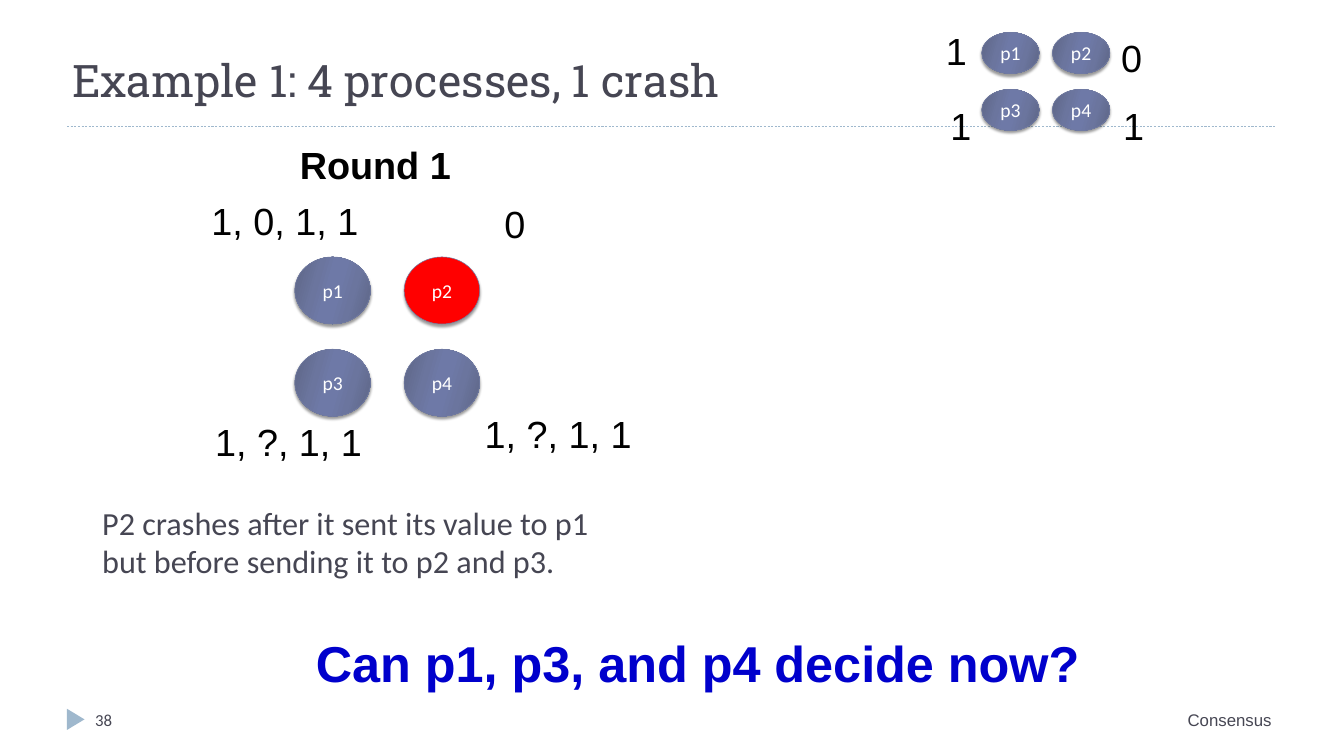
import dataclasses

import lxml.etree
import pptx
import pptx.dml.color
import pptx.enum.dml
import pptx.enum.shapes
import pptx.enum.text
import pptx.oxml.ns
import pptx.util
from pptx.util import Cm


@dataclasses.dataclass(frozen=True)
class Theme:
    """Colours, fonts and type sizes of the slide."""

    ink: str = "464653"
    black: str = "000000"
    white: str = "FFFFFF"
    accent: str = "9FB8CD"
    outline: str = "727CA3"
    crashed: str = "FF0000"
    question: str = "0000CC"
    gradient: tuple = ((0, "5D6585"), (30, "6B759E"), (45, "6E79A7"),
                       (55, "6E79A7"), (73, "6B759E"), (100, "5D6585"))
    heading_font: str = "Roboto Slab"
    body_font: str = "Calibri"
    label_font: str = "Arial"
    title_size: int = 64
    question_size: int = 72
    label_size: int = 54
    body_size: int = 46
    process_size: int = 28
    footer_size: int = 24


THEME = Theme()
ALIGN = pptx.enum.text.PP_ALIGN
ANCHOR = pptx.enum.text.MSO_ANCHOR
SHAPE = pptx.enum.shapes.MSO_SHAPE
VALUE_HEIGHT = 2.57


def rgb(code):
    """Return a colour object for a hex code."""
    return pptx.dml.color.RGBColor.from_string(code)


def add_child(parent, tag, **attributes):
    """Append a DrawingML element to a parent element."""
    child = lxml.etree.SubElement(parent, pptx.oxml.ns.qn(f"a:{tag}"))
    for name, value in attributes.items():
        child.set(name, str(value))
    return child


def add_span(para, text, font, size, color, bold=False):
    """Add one formatted run to a paragraph."""
    span = para.add_run()
    span.text = text
    span.font.name = font
    span.font.size = pptx.util.Pt(size)
    span.font.color.rgb = rgb(color)
    span.font.bold = bold


def add_text(shapes, area, text, font, size, color, bold=False,
             wrap=True, align=ALIGN.LEFT, anchor=ANCHOR.TOP):
    """Add a text box with one paragraph and return the paragraph."""
    box = shapes.add_textbox(*map(Cm, area))
    box.text_frame.word_wrap = wrap
    box.text_frame.vertical_anchor = anchor
    para = box.text_frame.paragraphs[0]
    para.alignment = align
    add_span(para, text, font, size, color, bold)
    return para


def add_label(shapes, area, text, size=THEME.label_size, color=THEME.black, bold=False):
    """Add an unwrapped label."""
    add_text(shapes, area, text, THEME.label_font, size, color, bold, wrap=False)


def fill_gradient(shape):
    """Fill a shape with the theme gradient."""
    shape.fill.gradient()
    shape.fill.gradient_angle = 344
    stops = next(shape._element.spPr.iter(pptx.oxml.ns.qn("a:gsLst")))
    for stop in list(stops):
        stops.remove(stop)
    for position, color in THEME.gradient:
        stop = add_child(stops, "gs", pos=position * 1000)
        add_child(stop, "srgbClr", val=color)


def add_shadow(shape):
    """Give a shape a soft shadow below it."""
    shape.shadow.inherit = False
    effects = shape._element.spPr.find(pptx.oxml.ns.qn("a:effectLst"))
    shadow = add_child(effects, "outerShdw", blurRad=pptx.util.Pt(4),
                       dist=pptx.util.Pt(3.4), dir=5400000, rotWithShape=0)
    color = add_child(shadow, "srgbClr", val=THEME.black)
    add_child(color, "alpha", val=40000)


def add_process(shapes, area, name, crashed=False):
    """Add one process ellipse."""
    process = shapes.add_shape(SHAPE.OVAL, *map(Cm, area))
    if crashed:
        process.fill.solid()
        process.fill.fore_color.rgb = rgb(THEME.crashed)
    else:
        fill_gradient(process)
    process.line.color.rgb = rgb(THEME.outline)
    process.line.width = pptx.util.Pt(0.75)
    add_shadow(process)
    process.text_frame.vertical_anchor = ANCHOR.MIDDLE
    para = process.text_frame.paragraphs[0]
    para.alignment = ALIGN.CENTER
    add_span(para, name, THEME.body_font, THEME.process_size, THEME.white)


def add_processes(shapes, origin, size, step, values, crashed=None):
    """Add a two by two grid of processes and their values."""
    for index, (left, top, width, text) in enumerate(values):
        row, column = divmod(index, 2)
        name = f"p{index + 1}"
        area = (origin[0] + column * step[0], origin[1] + row * step[1], *size)
        add_process(shapes, area, name, name == crashed)
        add_label(shapes, (left, top, width, VALUE_HEIGHT), text)


def add_rule(shapes):
    """Add the dashed line under the title."""
    rule = shapes.add_connector(pptx.enum.shapes.MSO_CONNECTOR.STRAIGHT,
                                Cm(3.38), Cm(6.35), Cm(64.34), Cm(6.35))
    rule.line.color.rgb = rgb(THEME.accent)
    rule.line.width = pptx.util.Pt(0.75)
    rule.line.dash_style = pptx.enum.dml.MSO_LINE.DASH
    add_child(rule._element.spPr, "effectLst")


def add_footer(shapes):
    """Add the page marker, page number and footer text."""
    marker = shapes.add_shape(SHAPE.ISOSCELES_TRIANGLE,
                              Cm(3.28), Cm(35.81), Cm(1.07), Cm(0.89))
    marker.rotation = 90
    marker.shadow.inherit = False
    marker.fill.solid()
    marker.fill.fore_color.rgb = rgb(THEME.accent)
    marker.line.fill.background()
    add_text(shapes, (4.55, 35.64, 14.68, 2.03), "38",
             THEME.body_font, THEME.footer_size, THEME.ink)
    add_text(shapes, (38.38, 35.64, 25.96, 2.03), "Consensus",
             THEME.label_font, THEME.footer_size, THEME.ink, align=ALIGN.RIGHT)


def add_explanation(shapes):
    """Add the indented explanation of the crash."""
    para = add_text(shapes, (3.38, 25.22, 28.47, 8.97),
                    "P2 crashes after it sent its value to p1 "
                    "but before sending it to p2 and p3.",
                    THEME.body_font, THEME.body_size, THEME.ink)
    para._p.get_or_add_pPr().set("marL", str(Cm(1.52)))


def main():
    """Build the slide and save the deck."""
    deck = pptx.Presentation()
    deck.slide_width, deck.slide_height = Cm(67.74), Cm(38.1)
    page = deck.slides.add_slide(deck.slide_layouts[6])
    shapes = page.shapes
    add_rule(shapes)
    add_text(shapes, (3.38, 0, 60.96, 5.51), "Example 1: 4 processes, 1 crash",
             THEME.heading_font, THEME.title_size, THEME.ink, anchor=ANCHOR.BOTTOM)
    add_explanation(shapes)
    add_footer(shapes)
    add_processes(shapes, (14.86, 12.95), (3.81, 3.38), (5.51, 4.65),
                  ((10.41, 9.83, 8, "1, 0, 1, 1"), (25.17, 9.98, 1.57, "0"),
                   (10.59, 20.98, 8, "1, ?, 1, 1"), (24.18, 20.57, 8, "1, ?, 1, 1")),
                  crashed="p2")
    initial_state = shapes.add_group_shape()
    add_processes(initial_state.shapes, (49.48, 1.63), (2.9, 2.08), (3.56, 2.87),
                  ((47.42, 1.27, 1.57, "1"), (56.26, 1.6, 1.57, "0"),
                   (47.65, 5.03, 1.57, "1"), (56.36, 5.03, 1.57, "1")))
    add_label(shapes, (14.86, 7.04, 8.2, VALUE_HEIGHT), "Round 1", bold=True)
    add_label(shapes, (15.67, 31.75, 40.13, 3.33), "Can p1, p3, and p4 decide now?",
              THEME.question_size, THEME.question, bold=True)
    deck.save("out.pptx")


if __name__ == "__main__":
    main()
